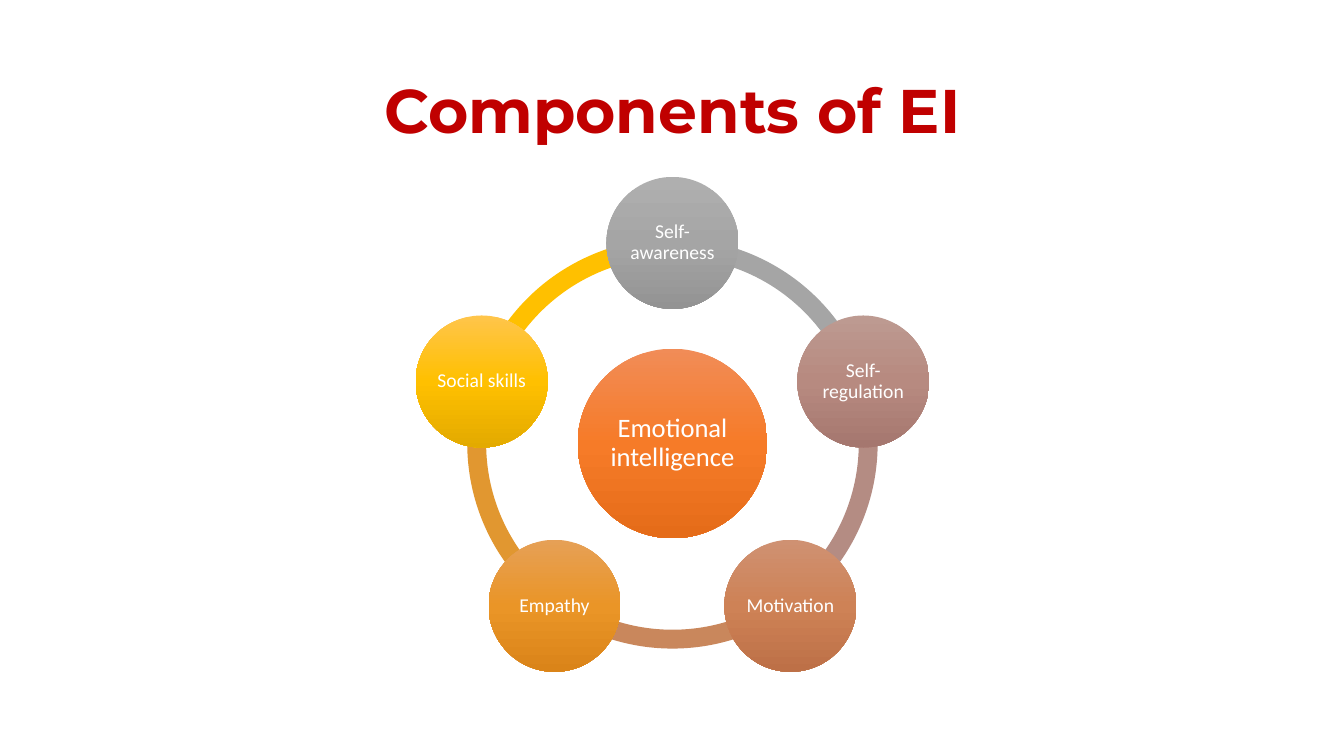
"""Build the slide on the five components of emotional intelligence."""
from copy import deepcopy
from math import cos, radians, sin

from pptx import Presentation
from pptx.dml.color import RGBColor
from pptx.enum import shapes, text
from pptx.util import Inches, Pt

TITLE = "Components of EI"
CORE = ("Emotional intelligence", ("F18C57", "F67B28", "E56C19"))
COMPONENTS = [
    ("Self-awareness", "A5A5A5", ("AFAFAF", "A5A5A5", "939393")),
    ("Self-regulation", "B48C83", ("BD9A91", "B78A80", "A5776F")),
    ("Motivation", "C9875C", ("CF9172", "CE8256", "BD7047")),
    ("Empathy", "E19730", ("E6A056", "EA9527", "DA8419")),
    ("Social skills", "FFC000", ("FFC54B", "FFC000", "E3AA00")),
]
THEME = {
    "title": "C00000", "label": "FFFFFF",
    "title_font": "Montserrat", "label_font": "Calibri",
    "title_size": 44, "core_size": 19, "component_size": 14,
}
CENTRE_X, CENTRE_Y = 6.67, 4.4
RING_SIZE, RING_THICKNESS = 4.07, 0.046
ORBIT, CORE_SIZE, COMPONENT_SIZE = 1.99, 1.88, 1.31
STEP = 360 / len(COMPONENTS)
ADJUSTMENT_PER_DEGREE = 0.6


def format_text(frame, wording, font_name, size, colour, bold=False):
    frame.text = wording
    frame.word_wrap = True
    frame.auto_size = text.MSO_AUTO_SIZE.NONE
    frame.vertical_anchor = text.MSO_ANCHOR.MIDDLE
    paragraph = frame.paragraphs[0]
    paragraph.alignment = text.PP_ALIGN.CENTER
    paragraph.line_spacing = 0.9
    paragraph.font.name = font_name
    paragraph.font.size = Pt(size)
    paragraph.font.bold = bold
    paragraph.font.color.rgb = RGBColor.from_string(colour)


def add_centred(slide, preset, x, y, size):
    shape = slide.shapes.add_shape(
        preset, Inches(x - size / 2), Inches(y - size / 2), Inches(size), Inches(size))
    shape.shadow.inherit = False
    shape.line.fill.background()
    return shape


def shade(fill, colours):
    fill.gradient()
    fill.gradient_angle = 270
    first = fill.gradient_stops[0]._gs
    first.addnext(deepcopy(first))
    for stop, colour, position in zip(fill.gradient_stops, colours, (0, 0.5, 1)):
        stop.color.rgb = RGBColor.from_string(colour)
        stop.position = position


def add_circle(slide, wording, colours, x, y, size, font_size):
    circle = add_centred(slide, shapes.MSO_SHAPE.OVAL, x, y, size)
    shade(circle.fill, colours)
    frame = circle.text_frame
    frame.margin_left = frame.margin_right = Inches(0.02)
    frame.margin_top = frame.margin_bottom = Inches(0.02)
    format_text(frame, wording, THEME["label_font"], font_size, THEME["label"])


def add_arc(slide, start, colour):
    arc = add_centred(slide, shapes.MSO_SHAPE.BLOCK_ARC, CENTRE_X, CENTRE_Y, RING_SIZE)
    arc.adjustments[0] = start % 360 * ADJUSTMENT_PER_DEGREE
    arc.adjustments[1] = (start + STEP) % 360 * ADJUSTMENT_PER_DEGREE
    arc.adjustments[2] = RING_THICKNESS
    arc.fill.solid()
    arc.fill.fore_color.rgb = RGBColor.from_string(colour)


def main():
    deck = Presentation()
    deck.slide_width, deck.slide_height = Inches(13.33), Inches(7.5)
    slide = deck.slides.add_slide(deck.slide_layouts[5])

    title = slide.shapes.title
    title.left, title.top = Inches(0.92), Inches(0.4)
    title.width, title.height = Inches(11.5), Inches(1.45)
    format_text(title.text_frame, TITLE, THEME["title_font"],
                THEME["title_size"], THEME["title"], bold=True)

    angles = [270 + STEP * place for place in range(len(COMPONENTS))]
    for angle, (_, arc_colour, _) in reversed(list(zip(angles, COMPONENTS))):
        add_arc(slide, angle, arc_colour)

    add_circle(slide, *CORE, CENTRE_X, CENTRE_Y, CORE_SIZE, THEME["core_size"])
    for angle, (wording, _, colours) in zip(angles, COMPONENTS):
        x = CENTRE_X + ORBIT * cos(radians(angle))
        y = CENTRE_Y + ORBIT * sin(radians(angle))
        add_circle(slide, wording, colours, x, y, COMPONENT_SIZE, THEME["component_size"])

    deck.save("out.pptx")


if __name__ == "__main__":
    main()
